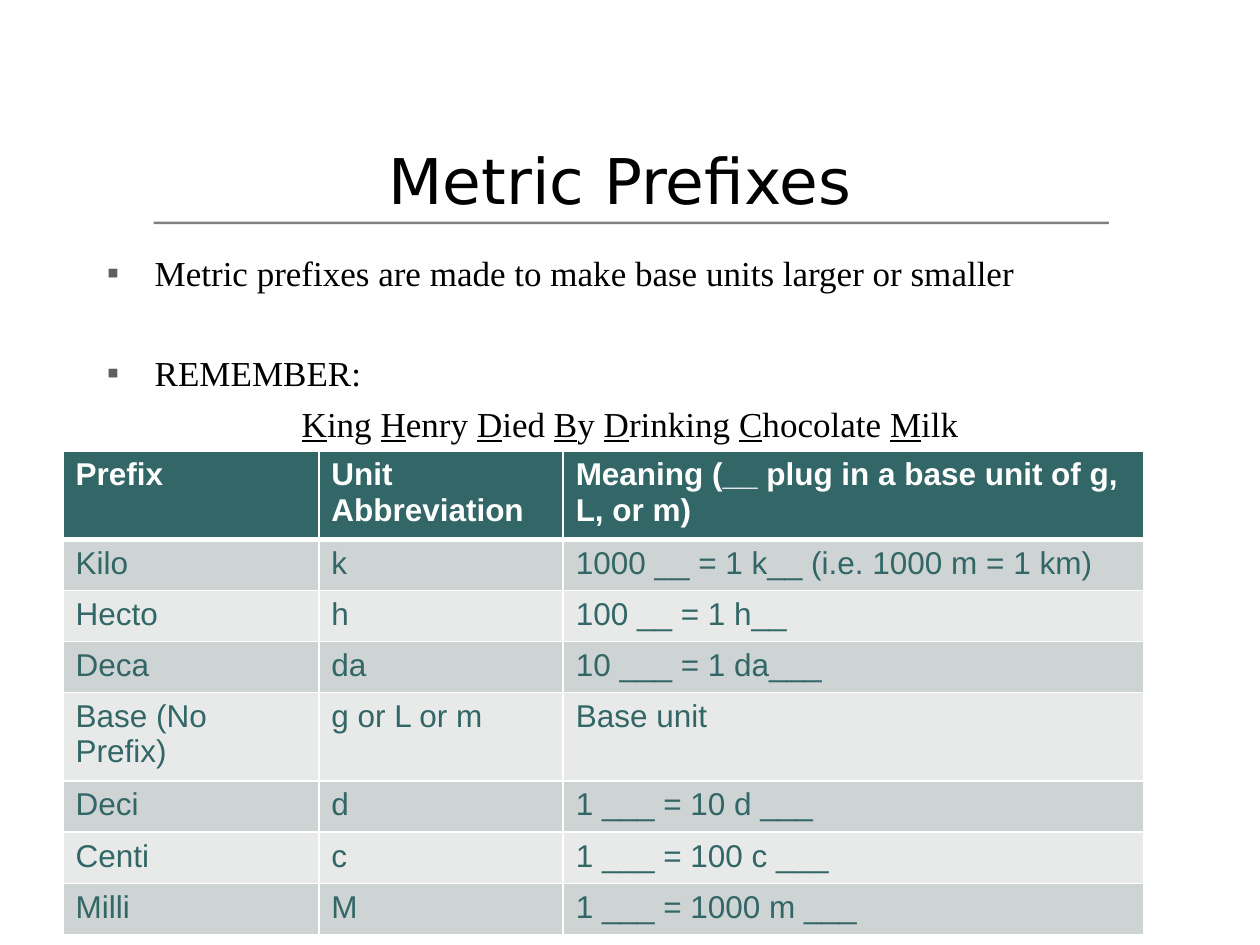
"""Builds the Metric Prefixes slide."""
import dataclasses

import lxml.etree
import pptx
import pptx.dml.color
import pptx.enum.shapes
import pptx.enum.text
import pptx.oxml.ns
import pptx.util

Inches = pptx.util.Inches
Pt = pptx.util.Pt
qn = pptx.oxml.ns.qn
ALIGN = pptx.enum.text.PP_ALIGN
ANCHOR = pptx.enum.text.MSO_ANCHOR


@dataclasses.dataclass(frozen=True)
class Theme:
    """Colours, fonts and type sizes."""
    ink: str = "000000"
    white: str = "FFFFFF"
    rule: str = "808080"
    bullet: str = "5F5F5F"
    teal: str = "336666"
    bands: tuple = ("CED3D3", "E8EAEA")
    title_font: str = "DejaVu Sans"
    body_font: str = "Times New Roman"
    table_font: str = "Arial"
    title_size: int = 36
    body_size: int = 20
    table_size: int = 18


T = Theme()
MNEMONIC = "King Henry Died By Drinking Chocolate Milk"
ROWS = [
    ("Prefix", "Unit Abbreviation", "Meaning (__ plug in a base unit of g, L, or m)"),
    ("Kilo", "k", "1000 __ = 1 k__ (i.e. 1000 m = 1 km)"),
    ("Hecto", "h", "100 __ = 1 h__"),
    ("Deca", "da", "10 ___ = 1 da___"),
    ("Base (No Prefix)", "g or L or m", "Base unit"),
    ("Deci", "d", "1 ___ = 10 d ___"),
    ("Centi", "c", "1 ___ = 100 c ___"),
    ("Milli", "M", "1 ___ = 1000 m ___"),
]


def rgb(value):
    """Return a colour from its hex digits."""
    return pptx.dml.color.RGBColor.from_string(value)


def add_run(p, text, font=T.body_font, size=T.body_size, color=T.ink, bold=False, underline=False):
    """Add formatted text to a paragraph."""
    r = p.add_run()
    r.text = text
    r.font.name = font
    r.font.size = Pt(size)
    r.font.color.rgb = rgb(color)
    r.font.bold = bold
    r.font.underline = underline


def add_box(s, x, y, w, h, anchor=ANCHOR.TOP):
    """Add a wrapping text box and return its text frame."""
    tf = s.shapes.add_textbox(Inches(x), Inches(y), Inches(w), Inches(h)).text_frame
    tf.word_wrap = True
    tf.vertical_anchor = anchor
    return tf


def set_bullet(p):
    """Give a paragraph a hanging square bullet."""
    pPr = p._p.get_or_add_pPr()
    pPr.set("marL", str(Inches(0.38)))
    pPr.set("indent", str(Inches(-0.38)))
    clr = lxml.etree.SubElement(pPr, qn("a:buClr"))
    lxml.etree.SubElement(clr, qn("a:srgbClr"), val=T.bullet)
    lxml.etree.SubElement(pPr, qn("a:buFont"), typeface=T.body_font)
    lxml.etree.SubElement(pPr, qn("a:buChar"), char="▪")


def set_borders(cell, top=1, bottom=1):
    """Draw white lines around a table cell."""
    tcPr = cell._tc.get_or_add_tcPr()
    for side, width in (("L", 1), ("R", 1), ("T", top), ("B", bottom)):
        ln = lxml.etree.SubElement(tcPr, qn(f"a:ln{side}"), w=str(Pt(width)))
        fill = lxml.etree.SubElement(ln, qn("a:solidFill"))
        lxml.etree.SubElement(fill, qn("a:srgbClr"), val=T.white)


def add_title(s):
    """Add the title and the rule below it."""
    sp = s.shapes.add_shape(pptx.enum.shapes.MSO_SHAPE.RECTANGLE,
                            Inches(1.22), Inches(1.76), Inches(7.58), Inches(0.02))
    sp.shadow.inherit = False
    sp.fill.solid()
    sp.fill.fore_color.rgb = rgb(T.rule)
    sp.line.fill.background()
    p = add_box(s, 0, 0.92, 10, 1, ANCHOR.MIDDLE).paragraphs[0]
    p.alignment = ALIGN.CENTER
    add_run(p, "Metric Prefixes ", font=T.title_font, size=T.title_size)


def add_body(s):
    """Add the bullets and the mnemonic with underlined initials."""
    tf = add_box(s, 0.75, 1.95, 8.5, 1.6)
    p = tf.paragraphs[0]
    set_bullet(p)
    add_run(p, "Metric prefixes are made to make base units larger or smaller")
    p = tf.add_paragraph()
    set_bullet(p)
    p.space_before = Pt(33)
    add_run(p, "REMEMBER:")
    p = tf.add_paragraph()
    p.alignment = ALIGN.CENTER
    p.space_before = Pt(5)
    words = MNEMONIC.split()
    for word in words:
        add_run(p, word[0], underline=True)
        add_run(p, word[1:] + (" " if word != words[-1] else ""))


def add_prefix_table(s):
    """Add the banded table of prefixes."""
    widths = (2.03, 1.94, 4.61)
    table = s.shapes.add_table(len(ROWS), len(widths), Inches(0.5), Inches(3.58),
                               Inches(sum(widths)), Inches(3.25)).table
    for column, width in zip(table.columns, widths):
        column.width = Inches(width)
    for i, row in enumerate(ROWS):
        header = i == 0
        for j, text in enumerate(row):
            cell = table.cell(i, j)
            set_borders(cell, top=3 if i == 1 else 1, bottom=3 if header else 1)
            cell.fill.solid()
            cell.fill.fore_color.rgb = rgb(T.teal if header else T.bands[(i - 1) % 2])
            add_run(cell.text_frame.paragraphs[0], text, font=T.table_font, size=T.table_size,
                    color=T.white if header else T.teal, bold=header)


def main():
    """Build and save the slide."""
    prs = pptx.Presentation()
    prs.slide_width = Inches(10)
    prs.slide_height = Inches(7.5)
    s = prs.slides.add_slide(prs.slide_layouts[6])
    add_title(s)
    add_body(s)
    add_prefix_table(s)
    prs.save("out.pptx")


if __name__ == "__main__":
    main()
